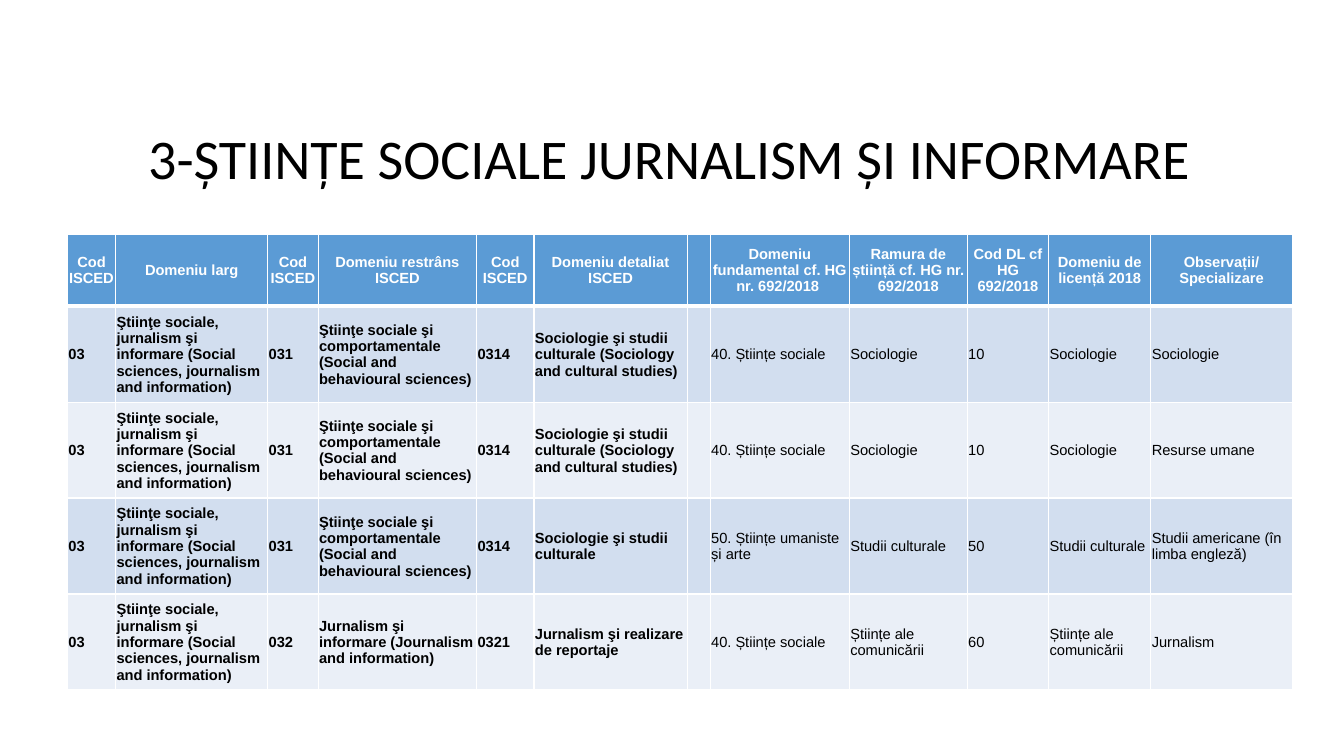
from lxml import etree
from pptx import Presentation
from pptx import util as u
from pptx.dml.color import RGBColor
from pptx.enum import text
from pptx.oxml import ns

HUES = {"head": "5B9BD5", "odd": "D2DEEF", "even": "EAEFF7",
        "white": "FFFFFF", "black": "000000"}

WIDTHS = [34.4, 108.7, 36, 113.2, 41, 109.4, 16.5, 99.4, 84.2, 58.2, 73, 101]
HEIGHTS = [51.5] + [68.5] * 4

HEAD = ["Cod ISCED", "Domeniu larg", "Cod ISCED", "Domeniu restrâns ISCED",
        "Cod ISCED", "Domeniu detaliat ISCED", "",
        "Domeniu fundamental cf. HG nr. 692/2018 ",
        "Ramura de știință cf. HG nr. 692/2018", "Cod DL cf HG 692/2018",
        "Domeniu de licență 2018", "Observații/ Specializare"]

BROAD = ["03", "Ştiinţe sociale, jurnalism şi informare "
         "(Social sciences, journalism and information)"]
SOCIAL = BROAD + ["031", "Ştiinţe sociale şi comportamentale "
                  "(Social and behavioural sciences)", "0314"]
STUDY = SOCIAL + ["Sociologie şi studii culturale "
                  "(Sociology and cultural studies)", "",
                  "40. Științe sociale", "Sociologie", "10", "Sociologie"]
ROWS = [
    STUDY + ["Sociologie"],
    STUDY + ["Resurse umane"],
    SOCIAL + ["Sociologie şi studii culturale", "",
              "50. Științe umaniste și arte", "Studii culturale", "50",
              "Studii culturale", "Studii americane (în limba engleză)"],
    BROAD + ["032", "Jurnalism şi informare (Journalism and information)",
             "0321", "Jurnalism şi realizare de reportaje", "",
             "40. Științe sociale", "Științe ale comunicării", "60",
             "Științe ale comunicării", "Jurnalism"],
]
GAP = HEAD.index("")  # the empty column parts bold cells from plain ones


class Deck:
    def __init__(self, wide, high):
        self.prs = Presentation()
        self.prs.slide_width, self.prs.slide_height = u.Pt(wide), u.Pt(high)
        self.slide = self.prs.slides.add_slide(self.prs.slide_layouts[6])

    def tint(self, hue):
        return RGBColor.from_string(HUES[hue])

    def run(self, para, words, size, face, hue, bold=False):
        run = para.add_run()
        run.text = words
        font = run.font
        font.size, font.name, font.bold = u.Pt(size), face, bold
        font.color.rgb = self.tint(hue)

    def title(self, words, *place):
        box = self.slide.shapes.add_textbox(*map(u.Pt, place))
        frame = box.text_frame
        frame.word_wrap = True
        frame.vertical_anchor = text.MSO_ANCHOR.MIDDLE
        para = frame.paragraphs[0]
        para.alignment = text.PP_ALIGN.CENTER
        para.line_spacing = 0.9
        self.run(para, words, 40, "Calibri", "black")

    def edge(self, cell, side, width):
        props = cell._tc.get_or_add_tcPr()
        line = etree.SubElement(props, ns.qn("a:ln" + side), w=str(u.Pt(width)))
        fill = etree.SubElement(line, ns.qn("a:solidFill"))
        etree.SubElement(fill, ns.qn("a:srgbClr"), val=HUES["white"])

    def cell(self, cell, words, row, col):
        top = row == 0
        for side in "LRTB":
            thick = (side, row) in (("B", 0), ("T", 1))
            self.edge(cell, side, 3 if thick else 1)
        cell.fill.solid()
        hue = "head" if top else "odd" if row % 2 else "even"
        cell.fill.fore_color.rgb = self.tint(hue)
        cell.vertical_anchor = text.MSO_ANCHOR.MIDDLE
        inset = u.Pt(0 if top else 0.7)
        cell.margin_left = cell.margin_right = cell.margin_top = inset
        cell.margin_bottom = 0
        if words:
            para = cell.text_frame.paragraphs[0]
            para.alignment = text.PP_ALIGN.CENTER if top else text.PP_ALIGN.LEFT
            self.run(para, words, 10.5, "Arial", "white" if top else "black",
                     top or col < GAP)

    def table(self, rows, left, top):
        frame = self.slide.shapes.add_table(
            len(rows), len(WIDTHS), u.Pt(left), u.Pt(top),
            u.Pt(sum(WIDTHS)), u.Pt(sum(HEIGHTS)))
        grid = frame.table
        for col, width in zip(grid.columns, WIDTHS):
            col.width = u.Pt(width)
        for row, height in zip(grid.rows, HEIGHTS):
            row.height = u.Pt(height)
        for r, row in enumerate(rows):
            for c, words in enumerate(row):
                self.cell(grid.cell(r, c), words, r, c)


def main():
    deck = Deck(960, 540)
    deck.title("3-ȘTIINȚE SOCIALE JURNALISM ȘI INFORMARE ", 68.4, 89.3, 828, 51.8)
    deck.table([HEAD] + ROWS, 48.2, 167.3)
    deck.prs.save("out.pptx")


if __name__ == "__main__":
    main()
